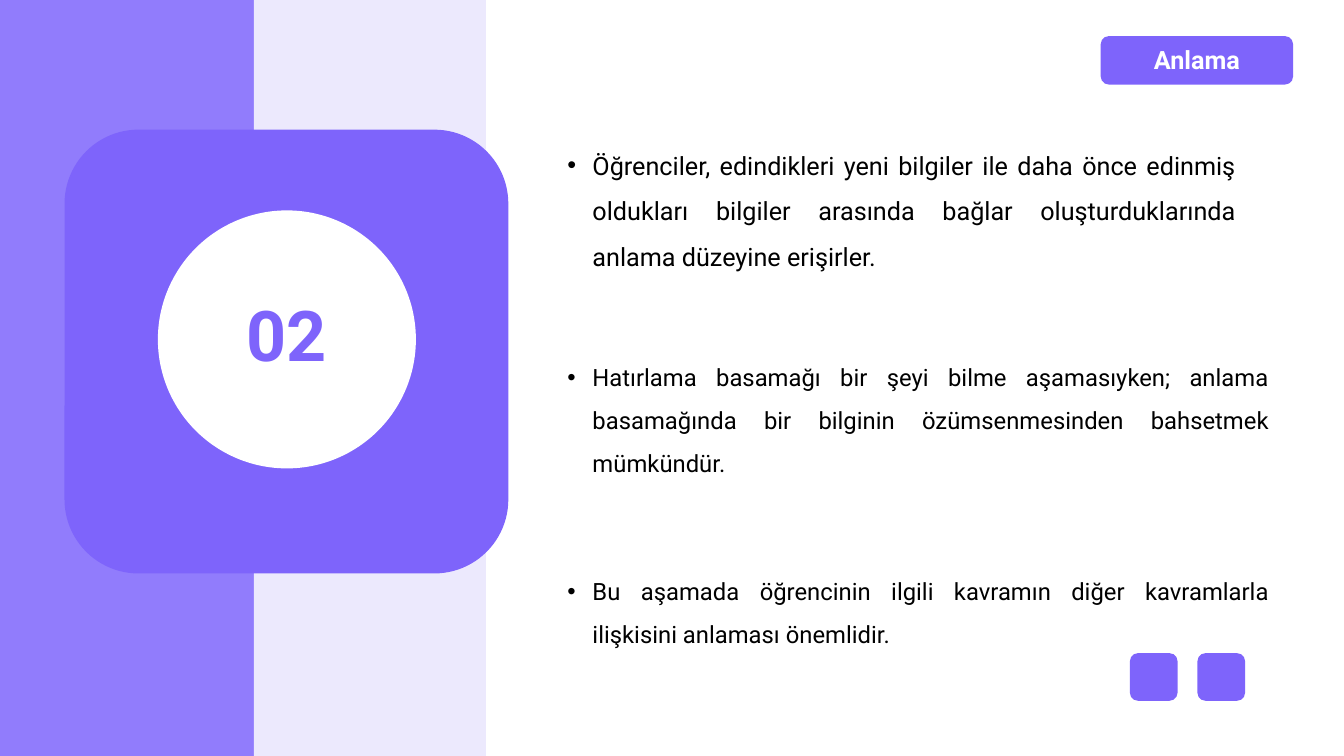
from lxml.etree import SubElement
from pptx import Presentation
from pptx.dml.color import RGBColor
from pptx.enum.shapes import MSO_SHAPE
from pptx.enum.text import MSO_ANCHOR, PP_ALIGN
from pptx.oxml.ns import qn
from pptx.util import Pt

PURPLE = "7E64FB"
WHITE = "FFFFFF"

deck = Presentation()
deck.slide_width, deck.slide_height = Pt(960), Pt(540)
page = deck.slides.add_slide(deck.slide_layouts[6])


def color(value):
    return RGBColor.from_string(value)


def write(frame, text, size, ink, align, spacing, bold=False):
    frame.word_wrap = True
    para = frame.paragraphs[0] if not frame.text else frame.add_paragraph()
    para.text = text
    para.alignment = align
    para.line_spacing = spacing
    para.font.name = "Roboto"
    para.font.size = Pt(size)
    para.font.bold = bold
    para.font.color.rgb = color(ink)
    return para


panels = [
    (MSO_SHAPE.RECTANGLE, 0, 0, 181.44, 540, "917CFC"),
    (MSO_SHAPE.RECTANGLE, 181.44, 0, 165.6, 540, "ECE9FD"),
    (MSO_SHAPE.ROUNDED_RECTANGLE, 807.12, 466.56, 34, 34, PURPLE),
    (MSO_SHAPE.ROUNDED_RECTANGLE, 855.36, 466.56, 34, 34, PURPLE),
    (MSO_SHAPE.ROUNDED_RECTANGLE, 46.08, 92.6, 317, 317, PURPLE),
    (MSO_SHAPE.OVAL, 112.8, 150.3, 184.3, 184.3, WHITE),
    (MSO_SHAPE.ROUNDED_RECTANGLE, 786.24, 25.8, 137.4, 34.6, PURPLE),
]
for kind, left, top, width, height, fill in panels:
    panel = page.shapes.add_shape(kind, Pt(left), Pt(top), Pt(width), Pt(height))
    panel.shadow.inherit = False
    panel.fill.solid()
    panel.fill.fore_color.rgb = color(fill)
    panel.line.fill.background()

labels = [
    ("02", 33.12, 201.6, 343.44, 81.36, 50, PURPLE, MSO_ANCHOR.MIDDLE),
    ("Anlama", 783.36, 30.24, 143.28, 25.92, 18, WHITE, MSO_ANCHOR.TOP),
]
for text, left, top, width, height, size, ink, anchor in labels:
    box = page.shapes.add_textbox(Pt(left), Pt(top), Pt(width), Pt(height))
    box.text_frame.vertical_anchor = anchor
    write(box.text_frame, text, size, ink, PP_ALIGN.CENTER, 0.9, bold=True)

bodies = [
    (92.88, 491.76, 58.32, 18, [
        "Öğrenciler, edindikleri yeni bilgiler ile daha önce edinmiş oldukları "
        "bilgiler arasında bağlar oluşturduklarında anlama düzeyine erişirler.",
    ]),
    (245.52, 515.52, 172.08, 17, [
        "Hatırlama basamağı bir şeyi bilme aşamasıyken; anlama basamağında "
        "bir bilginin özümsenmesinden bahsetmek mümkündür.",
        "Bu aşamada öğrencinin ilgili kavramın diğer kavramlarla ilişkisini "
        "anlaması önemlidir.",
    ]),
]
for top, width, height, size, points in bodies:
    box = page.shapes.add_textbox(Pt(398.16), Pt(top), Pt(width), Pt(height))
    for index, point in enumerate(points):
        para = write(box.text_frame, point, size, "000000", PP_ALIGN.JUSTIFY, 1.5)
        para.space_before = Pt(61 * index)
        properties = para._p.get_or_add_pPr()
        properties.set("marL", str(Pt(18)))
        properties.set("indent", str(Pt(-18)))
        bullet_font = SubElement(properties, qn("a:buFont"), typeface="Arial")
        bullet = SubElement(properties, qn("a:buChar"), char="•")
        properties.find(qn("a:defRPr")).addprevious(bullet_font)
        bullet_font.addnext(bullet)

deck.save("out.pptx")
